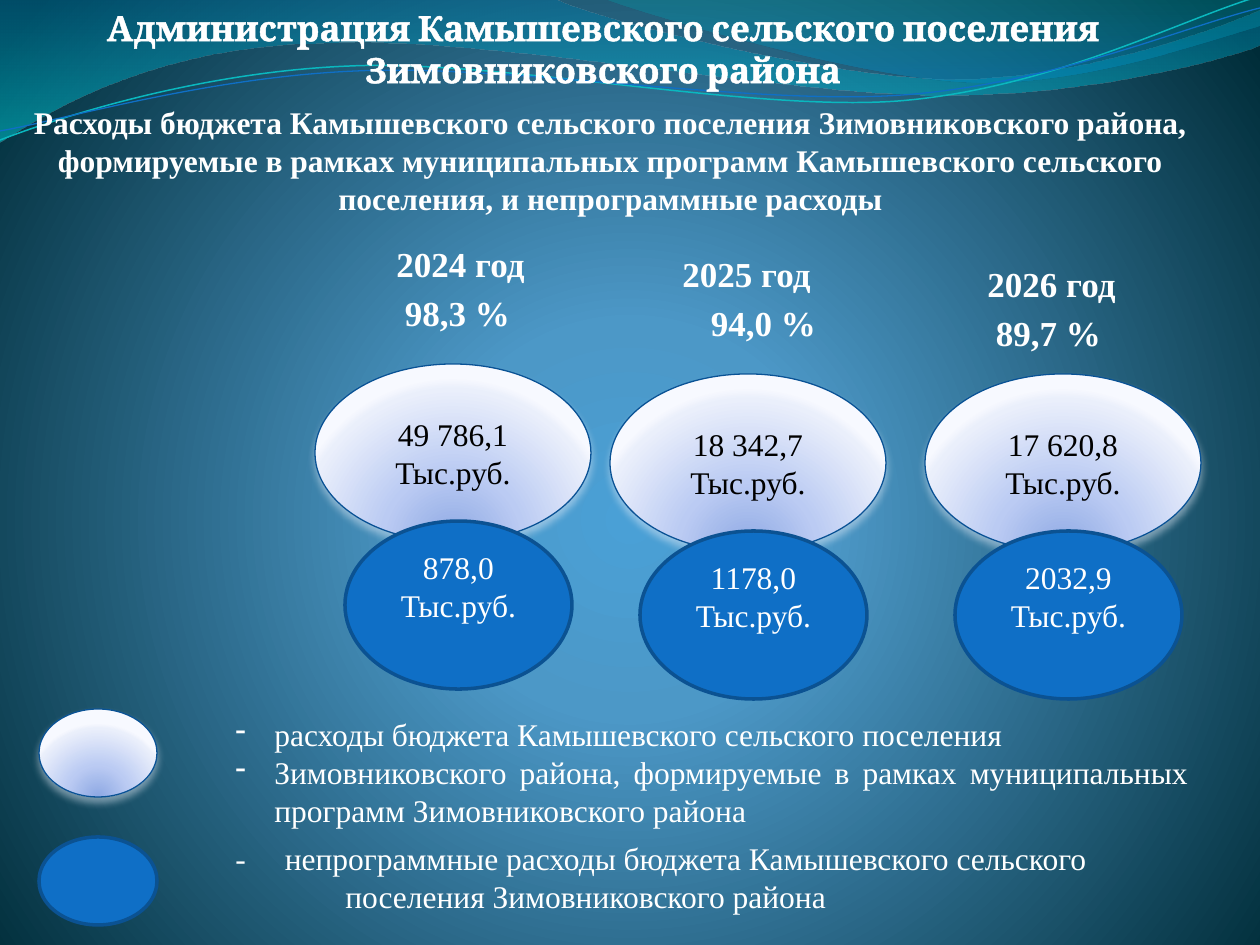
"""Build the slide on programme and non-programme budget spending."""
from lxml import etree
from pptx import Presentation
from pptx.dml.color import RGBColor
from pptx.enum.shapes import MSO_SHAPE
from pptx.enum.text import MSO_ANCHOR, PP_ALIGN
from pptx.oxml import parse_xml
from pptx.oxml.ns import nsdecls, qn
from pptx.util import Emu, Pt

EMU_PER_PX = 914400 / 126
OVAL = MSO_SHAPE.OVAL
MIDDLE = MSO_ANCHOR.MIDDLE
LEFT, CENTER, JUSTIFY = PP_ALIGN.LEFT, PP_ALIGN.CENTER, PP_ALIGN.JUSTIFY

WHITE = RGBColor(0xFF, 0xFF, 0xFF)
BLACK = RGBColor(0x00, 0x00, 0x00)
BLUE = RGBColor(0x0F, 0x6F, 0xC6)
DARK_BLUE = RGBColor(0x0B, 0x52, 0x92)
EDGE_BLUE = RGBColor(0x09, 0x52, 0x95)
TEAL = RGBColor(0x0A, 0xB8, 0xBF)
HALO = RGBColor(0xE6, 0xEE, 0xFA)

BACKDROP = [(0, RGBColor(0x4A, 0xA0, 0xD6), 100), (25, RGBColor(0x4C, 0x98, 0xC7), 100),
            (100, RGBColor(0x00, 0x2C, 0x38), 100)]
PEARL = [(0, RGBColor(0x8D, 0xA8, 0xE3), 100), (43, RGBColor(0xBB, 0xCB, 0xF3), 100),
         (93, RGBColor(0xEA, 0xEF, 0xFB), 100), (100, RGBColor(0xF7, 0xF9, 0xFF), 100)]
WIDE_WAVE = [(0, RGBColor(0x00, 0x74, 0xA1), 45), (100, RGBColor(0x00, 0xC6, 0xCF), 55)]
CORNER_WAVE = [(0, RGBColor(0x00, 0xA1, 0xA9), 30), (80, RGBColor(0x00, 0x8B, 0xBF), 45)]

WIDE_WAVE_PATH = [
    (0, 0), (554, -1), (600, 21, 837, 79, 955, 79), (1075, 79, 1207, 33, 1260, 11),
    (1261, 45), (1239, 55, 1096, 96, 940, 95), (784, 95, 481, 35, 324, 43),
    (163, 45, 58, 105, -1, 142)]
CORNER_WAVE_PATH = [
    (604, -1), (641, 14, 859, 78, 969, 82), (1079, 87, 1211, 40, 1260, 26), (1260, 0)]
TEAL_STRAND_PATH = [
    (0, 140), (60, 117, 199, 72, 349, 66), (498, 59, 747, 112, 898, 101),
    (1050, 89, 1182, 19, 1257, -3)]
BLUE_STRAND_PATH = [
    (0, 131), (59, 121, 207, 77, 357, 71), (508, 64, 752, 106, 903, 95),
    (1053, 84, 1186, 26, 1260, 8)]

YEARS = [
    ("2024 год", (384, 236), "98,3 %", (364, 285), "49 786,1", "878,0", (315, 364)),
    ("2025 год", (670, 246), "94,0 %", (670, 295), "18 342,7", "1178,0", (610, 374)),
    ("2026 год", (975, 256), "89,7 %", (955, 305), "17 620,8", "2032,9", (925, 374)),
]
UNIT = "Тыс.руб."


def px(length):
    """Turn px into EMU."""
    return Emu(round(length * EMU_PER_PX))


def bend(shape, segments):
    """Join the points of each six-number segment into one cubic curve."""
    corners = iter(shape.element.xpath(".//a:path/a:lnTo"))
    for segment in segments:
        first = next(corners)
        if len(segment) == 6:
            curve = etree.Element(qn("a:cubicBezTo"))
            first.addprevious(curve)
            for corner in (first, next(corners), next(corners)):
                curve.append(corner[0])
                corner.getparent().remove(corner)


def set_gradient(owner, fill, stops, focus=None):
    """Give a fill gradient stops, running round a focus or else downwards."""
    fill.gradient()
    stop_xml = "".join(
        f'<a:gs pos="{pos * 1000}"><a:srgbClr val="{color}">'
        f'<a:alpha val="{opacity * 1000}"/></a:srgbClr></a:gs>'
        for pos, color, opacity in stops)
    direction = '<a:lin ang="5400000" scaled="0"/>'
    if focus:
        sides = " ".join(f'{side}="{value * 1000}"' for side, value in zip("ltrb", focus))
        direction = f'<a:path path="circle"><a:fillToRect {sides}/></a:path>'
    default = owner.element.xpath(".//a:gradFill")[0]
    default.getparent().replace(default, parse_xml(
        f'<a:gradFill {nsdecls("a")} rotWithShape="1"><a:gsLst>{stop_xml}</a:gsLst>'
        f'{direction}</a:gradFill>'))


def write(frame, *lines, size=18, font="Times New Roman", color=WHITE, bold=False,
          align=LEFT, hanging=0, bullet=None, lead=None, lead_spacing=0, outline=0):
    """Write each line as a paragraph, after a spaced-out lead if there is one."""
    frame.word_wrap = True
    for number, line in enumerate(lines):
        paragraph = frame.add_paragraph() if number else frame.paragraphs[0]
        paragraph.alignment = align
        for part in filter(None, (lead, line)):
            run = paragraph.add_run()
            run.text = part
            run.font.size, run.font.name, run.font.bold = Pt(size), font, bold
            run.font.color.rgb = color
            if part == lead:
                run.font._element.set("spc", str(lead_spacing))
            if outline:
                run.font._element.insert(0, parse_xml(
                    f'<a:ln {nsdecls("a")} w="{Pt(outline)}"><a:solidFill>'
                    f'<a:srgbClr val="{color}"/></a:solidFill></a:ln>'))
        properties = paragraph._p.get_or_add_pPr()
        properties.set("marL", str(px(hanging)))
        properties.set("indent", str(px(-hanging)))
        if bullet:
            properties.append(parse_xml(f'<a:buChar {nsdecls("a")} char="{bullet}"/>'))


class Board:
    """Holds the slide and the style of its elements."""

    def __init__(self, slide):
        self.slide = slide
        set_gradient(slide, slide.background.fill, BACKDROP, (10, 110, 10, 100))

    def outline(self, path, close):
        start, *segments = path
        builder = self.slide.shapes.build_freeform(*map(px, start), scale=1.0)
        builder.add_line_segments(
            [(px(segment[i]), px(segment[i + 1]))
             for segment in segments for i in range(0, len(segment), 2)], close=close)
        shape = builder.convert_to_shape()
        bend(shape, segments)
        shape.shadow.inherit = False
        return shape

    def wave(self, path, stops):
        shape = self.outline(path, True)
        set_gradient(shape, shape.fill, stops)
        shape.line.fill.background()

    def strand(self, path, color, width):
        shape = self.outline(path, False)
        shape.fill.background()
        shape.line.color.rgb, shape.line.width = color, Pt(width)

    def text(self, left, top, width, height, *lines, **style):
        box = self.slide.shapes.add_textbox(*map(px, (left, top, width, height)))
        write(box.text_frame, *lines, **style)

    def oval(self, left, top, width, height, edge, thickness, lines, color):
        shape = self.slide.shapes.add_shape(OVAL, *map(px, (left, top, width, height)))
        shape.shadow.inherit = False
        shape.line.color.rgb, shape.line.width = edge, Pt(thickness)
        shape.text_frame.vertical_anchor = MIDDLE
        write(shape.text_frame, *lines, color=color, align=CENTER)
        return shape

    def pearl_oval(self, left, top, width, height, *lines):
        shape = self.oval(left, top, width, height, EDGE_BLUE, 0.75, lines, BLACK)
        set_gradient(shape, shape.fill, PEARL, (50, 130, 50, -30))
        shape.element.xpath(".//a:effectLst")[0].append(parse_xml(
            f'<a:outerShdw {nsdecls("a")} blurRad="{Pt(4.5)}" dist="{Pt(3)}" dir="5400000" '
            f'algn="ctr" rotWithShape="0"><a:srgbClr val="{HALO}"><a:alpha val="48000"/>'
            '</a:srgbClr></a:outerShdw>'))

    def blue_oval(self, left, top, width, height, *lines):
        shape = self.oval(left, top, width, height, DARK_BLUE, 2, lines, WHITE)
        shape.fill.solid()
        shape.fill.fore_color.rgb = BLUE
        shape.text_frame.margin_bottom = px(44)


def main():
    """Build and save the slide."""
    deck = Presentation()
    deck.slide_width, deck.slide_height = px(1260), px(945)
    board = Board(deck.slides.add_slide(deck.slide_layouts[6]))

    board.wave(WIDE_WAVE_PATH, WIDE_WAVE)
    board.wave(CORNER_WAVE_PATH, CORNER_WAVE)
    board.strand(TEAL_STRAND_PATH, TEAL, 0.85)
    board.strand(BLUE_STRAND_PATH, BLUE, 0.75)

    board.text(20, 97, 1181, 127,
               "Расходы бюджета Камышевского сельского поселения Зимовниковского района, "
               "формируемые в рамках муниципальных программ Камышевского сельского "
               "поселения, и непрограммные расходы", bold=True, align=CENTER)
    for year, year_at, share, share_at, programme, other, (left, top) in YEARS:
        board.text(*year_at, 187, 55, year, size=20, bold=True)
        board.text(*share_at, 187, 55, share, size=20, bold=True, align=CENTER)
        board.pearl_oval(left, top, 276, 178, programme, UNIT)
        board.blue_oval(left + 30, top + 157, 227, 168, other, UNIT)

    board.pearl_oval(39, 709, 118, 88)
    board.blue_oval(39, 837, 118, 88)
    board.text(223, 709, 978, 127,
               "расходы бюджета Камышевского сельского поселения",
               "Зимовниковского района, формируемые в рамках муниципальных "
               "программ Зимовниковского района",
               align=JUSTIFY, hanging=39, bullet="-")
    board.text(223, 833, 980, 89,
               "непрограммные расходы бюджета Камышевского сельского "
               "поселения Зимовниковского района",
               hanging=110, lead="- ", lead_spacing=890)
    board.text(84, 0, 1038, 97,
               "Администрация Камышевского сельского поселения Зимовниковского района",
               size=20, font="Cambria", bold=True, align=CENTER, outline=1.45)

    deck.save("out.pptx")


if __name__ == "__main__":
    main()
